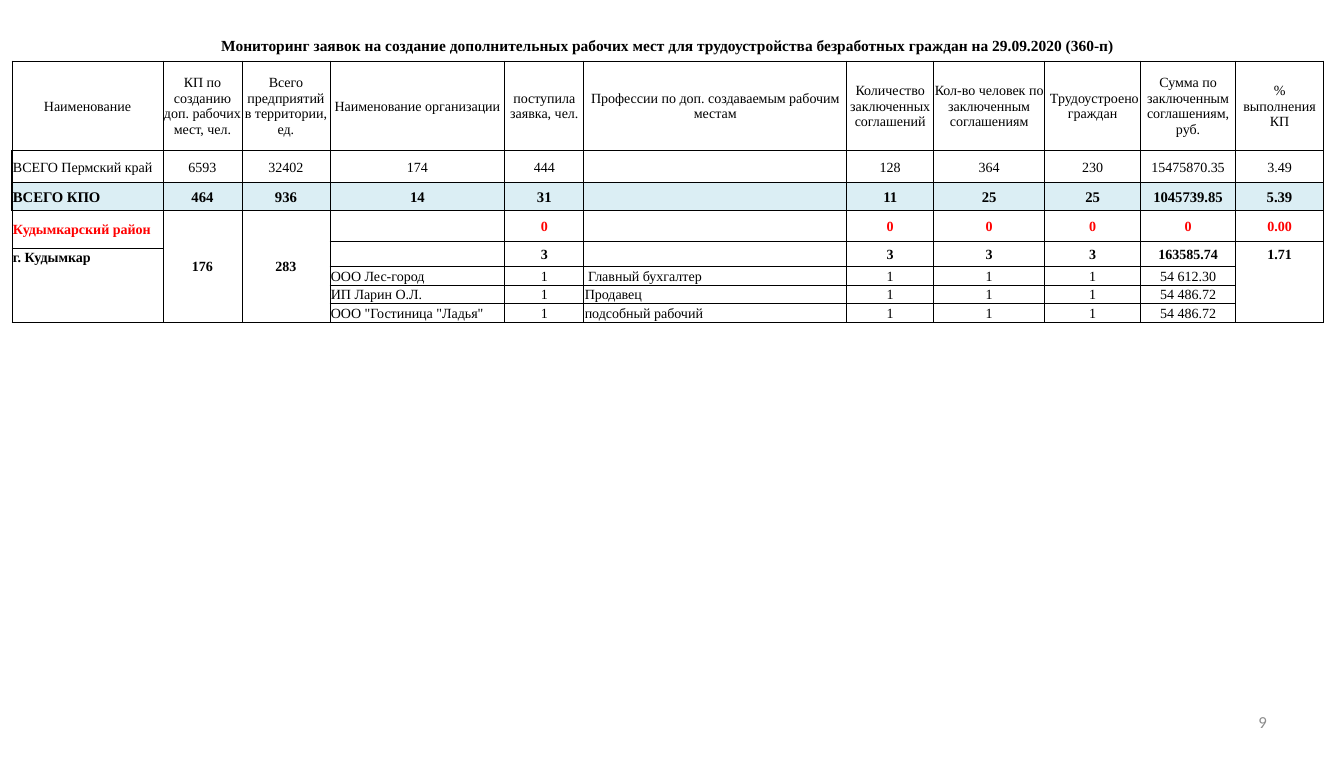
from dataclasses import dataclass

from lxml.etree import SubElement
from pptx import Presentation
from pptx.dml.color import RGBColor as RGB
from pptx.enum.text import MSO_ANCHOR as ANCHOR, PP_ALIGN as ALIGN
from pptx.oxml.ns import qn
from pptx.util import Inches, Pt


@dataclass(frozen=True)
class Theme:
    ink: RGB = RGB(0, 0, 0)
    alert: RGB = RGB(0xFF, 0, 0)
    muted: RGB = RGB(0x8C, 0x8C, 0x8C)
    total_fill: RGB = RGB(0xDB, 0xEE, 0xF4)
    table_font: str = "Times New Roman"
    number_font: str = "Calibri"
    title_size: float = 11
    total_size: float = 10.5
    body_size: float = 10
    number_size: float = 12
    thin: float = 0.5
    thick: float = 1


THEME = Theme()
NO_GRID_STYLE = "{2D5ABB26-0587-4C30-8999-92F81FD0307C}"
COL_WIDTHS = [151, 79, 88, 175, 79, 263, 87, 111, 96, 95, 88]
ROW_HEIGHTS = [31, 90, 32, 28, 31, 7, 15, 19, 18, 19]
TITLE, HEADER, REGION, TOTAL, DISTRICT, CITY, CITY_NAME, FIRST_FIRM = range(8)
LAST_ROW, LAST_COL = len(ROW_HEIGHTS) - 1, len(COL_WIDTHS) - 1

ROWS = [
    ["Мониторинг заявок на создание дополнительных рабочих мест для "
     "трудоустройства безработных граждан на 29.09.2020 (360-п)"],
    ["Наименование", "КП по созданию доп. рабочих мест, чел.",
     "Всего предприятий в территории, ед.", "Наименование организации",
     "поступила заявка, чел.", "Профессии по доп. создаваемым рабочим местам",
     "Количество заключенных соглашений",
     "Кол-во человек по заключенным соглашениям", " Трудоустроено граждан",
     "Сумма по заключенным соглашениям, руб.", "% выполнения КП"],
    ["ВСЕГО Пермский край", "6593", "32402", "174", "444", "",
     "128", "364", "230", "15475870.35", "3.49"],
    ["ВСЕГО КПО", "464", "936", "14", "31", "",
     "11", "25", "25", "1045739.85", "5.39"],
    ["Кудымкарский район", "176", "283", "", "0", "",
     "0", "0", "0", "0", "0.00"],
    ["", "", "", "", "3", "", "3", "3", "3", "163585.74", "1.71"],
    ["г. Кудымкар"],
    ["", "", "", "ООО Лес-город", "1", " Главный бухгалтер",
     "1", "1", "1", "54 612.30", ""],
    ["", "", "", "ИП Ларин О.Л.", "1", "Продавец",
     "1", "1", "1", "54 486.72", ""],
    ["", "", "", "ООО \"Гостиница \"Ладья\"", "1", "подсобный рабочий",
     "1", "1", "1", "54 486.72", ""],
]
MERGES = [
    ((TITLE, 0), (TITLE, LAST_COL)),
    ((DISTRICT, 0), (CITY, 0)),
    *(((DISTRICT, c), (LAST_ROW, c)) for c in (1, 2)),
    *(((CITY, c), (CITY_NAME, c)) for c in range(3, LAST_COL + 1)),
]


def px(n):
    return round(n * 914400 / 101)


def text_format(row, col):
    size = {TITLE: THEME.title_size, TOTAL: THEME.total_size}
    red = row == DISTRICT and col not in (1, 2)
    return {
        "name": THEME.table_font,
        "size": Pt(size.get(row, THEME.body_size)),
        "bold": row == TITLE or TOTAL <= row <= CITY_NAME,
        "color": THEME.alert if red else THEME.ink,
    }


def write(p, text, fmt):
    r = p.add_run()
    r.text = text
    for key, value in fmt.items():
        if key == "color":
            r.font.color.rgb = value
        else:
            setattr(r.font, key, value)


def edge_widths(row, col):
    """Border widths in points by side; 0 means no line."""
    edges = dict.fromkeys("LRTB", THEME.thin)
    if row == TITLE:
        edges.update(L=0, R=0, T=0)
    if row in (HEADER, REGION):
        edges["B"] = THEME.thick
    if row in (REGION, TOTAL):
        edges["T"] = THEME.thick
        if col == 0:
            edges["L"] = THEME.thick
        if col == LAST_COL:
            edges["R"] = THEME.thick
    open_from = {0: CITY_NAME, LAST_COL: CITY}.get(col)
    if open_from is not None:
        if row > open_from:
            edges["T"] = 0
        if open_from <= row < LAST_ROW:
            edges["B"] = 0
    return edges


def draw_edges(cell, edges):
    tcPr = cell._tc.get_or_add_tcPr()
    for i, (side, width) in enumerate(edges.items()):
        ln = tcPr.makeelement(qn(f"a:ln{side}"), {"w": str(Pt(width))})
        tcPr.insert(i, ln)
        if width:
            fill = SubElement(ln, qn("a:solidFill"))
            SubElement(fill, qn("a:srgbClr"), val=str(THEME.ink))
        else:
            SubElement(ln, qn("a:noFill"))


def format_cell(cell, row, col, text):
    insets = {"margin_left": px(1), "margin_top": px(1),
              "margin_right": px(1), "margin_bottom": 0}
    for key, value in insets.items():
        setattr(cell, key, value)
    cell.vertical_anchor = ANCHOR.MIDDLE
    if row == TOTAL:
        cell.fill.solid()
        cell.fill.fore_color.rgb = THEME.total_fill
    else:
        cell.fill.background()
    draw_edges(cell, edge_widths(row, col))

    p = cell.text_frame.paragraphs[0]
    left = (col == 0 and row >= REGION) or (col in (3, 5) and row >= FIRST_FIRM)
    p.alignment = ALIGN.LEFT if left else ALIGN.CENTER
    fmt = text_format(row, col)
    if text:
        write(p, text, fmt)
    else:
        SubElement(p._p, qn("a:endParaRPr"), sz=str(int(fmt["size"].pt * 100)))


def add_monitoring_table(s, x, y):
    frame = s.shapes.add_table(
        len(ROW_HEIGHTS), len(COL_WIDTHS), px(x), px(y),
        px(sum(COL_WIDTHS)), px(sum(ROW_HEIGHTS)))
    table = frame.table
    table.first_row = table.horz_banding = False
    table._tbl.tblPr.find(qn("a:tableStyleId")).text = NO_GRID_STYLE
    for column, width in zip(table.columns, COL_WIDTHS):
        column.width = px(width)
    for table_row, height in zip(table.rows, ROW_HEIGHTS):
        table_row.height = px(height)
    for row, texts in enumerate(ROWS):
        for col in range(len(COL_WIDTHS)):
            text = texts[col] if col < len(texts) else ""
            format_cell(table.cell(row, col), row, col, text)
    for first, last in MERGES:
        table.cell(*first).merge(table.cell(*last))


def add_page_number(s, x, y, w, h, number):
    tf = s.shapes.add_textbox(px(x), px(y), px(w), px(h)).text_frame
    tf.word_wrap = True
    tf.vertical_anchor = ANCHOR.MIDDLE
    p = tf.paragraphs[0]
    p.alignment = ALIGN.RIGHT
    write(p, number, {"name": THEME.number_font, "size": Pt(THEME.number_size),
                      "color": THEME.muted})


def main():
    prs = Presentation()
    prs.slide_width, prs.slide_height = Inches(13.31), Inches(7.5)
    s = prs.slides.add_slide(prs.slide_layouts[6])
    add_page_number(s, 963, 702, 314, 40, "9")
    add_monitoring_table(s, 12, 30)
    prs.save("out.pptx")


if __name__ == "__main__":
    main()
